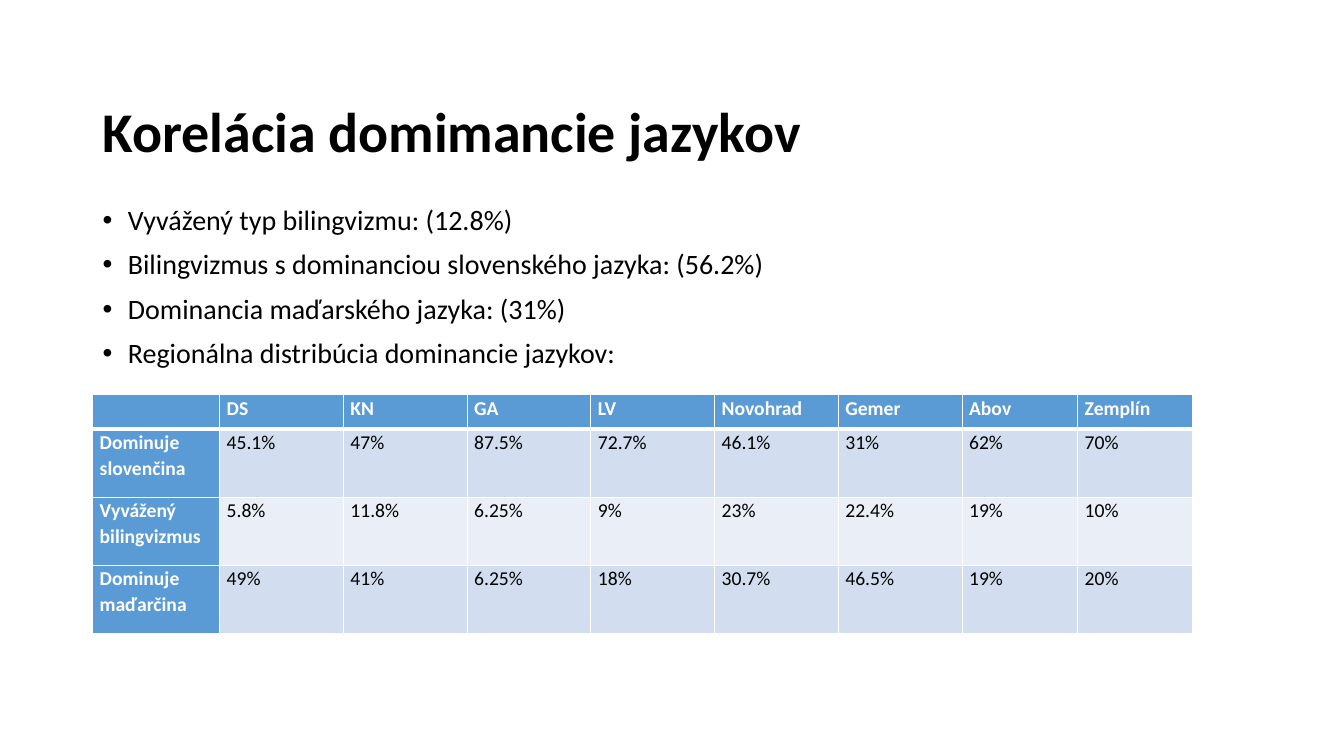
from lxml import etree
from pptx import Presentation
from pptx.dml.color import RGBColor
from pptx.enum import text
from pptx.oxml import ns
from pptx.util import Pt

COLORS = {"black": "000000", "white": "FFFFFF", "header": "5B9BD5",
          "odd": "D2DEEF", "even": "EAEFF7"}
FONT = "Calibri"
LEFT = 66.24


def style(p, size, color, bold, spacing):
    p.line_spacing = spacing
    for r in p.runs:
        r.font.name = FONT
        r.font.size = Pt(size)
        r.font.bold = bold
        r.font.color.rgb = RGBColor.from_string(COLORS[color])


def add_border(tcPr, index, side, width):
    ln = etree.Element(ns.qn(f"a:ln{side}"), w=str(Pt(width)))
    fill = etree.SubElement(ln, ns.qn("a:solidFill"))
    etree.SubElement(fill, ns.qn("a:srgbClr"), val=COLORS["white"])
    tcPr.insert(index, ln)


prs = Presentation()
prs.slide_width, prs.slide_height = Pt(960), Pt(540)
s = prs.slides.add_slide(prs.slide_layouts[6])

# Title
tf = s.shapes.add_textbox(Pt(LEFT), Pt(44), Pt(828), Pt(104.4)).text_frame
tf.word_wrap = True
tf.vertical_anchor = text.MSO_ANCHOR.MIDDLE
tf.text = "Korelácia domimancie jazykov"
style(tf.paragraphs[0], 40, "black", True, 0.9)

# Bullets
tf = s.shapes.add_textbox(Pt(LEFT), Pt(144), Pt(828), Pt(127.4)).text_frame
tf.word_wrap = True
tf.text = "\n".join([
    "Vyvážený typ bilingvizmu: (12.8%)",
    "Bilingvizmus s dominanciou slovenského jazyka: (56.2%)",
    "Dominancia maďarského jazyka: (31%)",
    "Regionálna distribúcia dominancie jazykov:",
])
for p in tf.paragraphs:
    style(p, 20, "black", False, 0.9)
    p.space_before = Pt(10)
    pPr = p._p.get_or_add_pPr()
    pPr.set("marL", str(Pt(18)))
    pPr.set("indent", str(Pt(-18)))
    etree.SubElement(pPr, ns.qn("a:buFont"), typeface="Arial")
    etree.SubElement(pPr, ns.qn("a:buChar"), char="•")

# Regional table
rows = [
    ["", "DS", "KN", "GA", "LV", "Novohrad", "Gemer", "Abov", "Zemplín"],
    ["Dominuje slovenčina", "45.1%", "47%", "87.5%", "72.7%", "46.1%", "31%", "62%", "70%"],
    ["Vyvážený bilingvizmus", "5.8%", "11.8%", "6.25%", "9%", "23%", "22.4%", "19%", "10%"],
    ["Dominuje maďarčina", "49%", "41%", "6.25%", "18%", "30.7%", "46.5%", "19%", "20%"],
]
widths = [90.7] + [88.4] * 6 + [82.6, 81.8]
heights = [24.6] + [48.6] * 3
table = s.shapes.add_table(len(rows), len(widths), Pt(LEFT), Pt(282),
                           Pt(sum(widths)), Pt(sum(heights))).table
table.first_col = True
for column, width in zip(table.columns, widths):
    column.width = Pt(width)
for i, (row, height) in enumerate(zip(rows, heights)):
    table.rows[i].height = Pt(height)
    for j, value in enumerate(row):
        cell = table.cell(i, j)
        heading = i == 0 or j == 0
        band = "header" if heading else "odd" if i % 2 else "even"
        cell.fill.solid()
        cell.fill.fore_color.rgb = RGBColor.from_string(COLORS[band])
        cell.margin_left = cell.margin_right = Pt(5)
        cell.margin_top = cell.margin_bottom = 0
        cell.text = value
        p = cell.text_frame.paragraphs[0]
        p.alignment = text.PP_ALIGN.JUSTIFY
        style(p, 14, "white" if heading else "black", heading, 1.07)
        # A thicker rule separates the header row from the body
        borders = {"L": 1, "R": 1, "T": 3 if i == 1 else 1, "B": 3 if i == 0 else 1}
        for k, (side, width) in enumerate(borders.items()):
            add_border(cell._tc.get_or_add_tcPr(), k, side, width)

prs.save("out.pptx")
